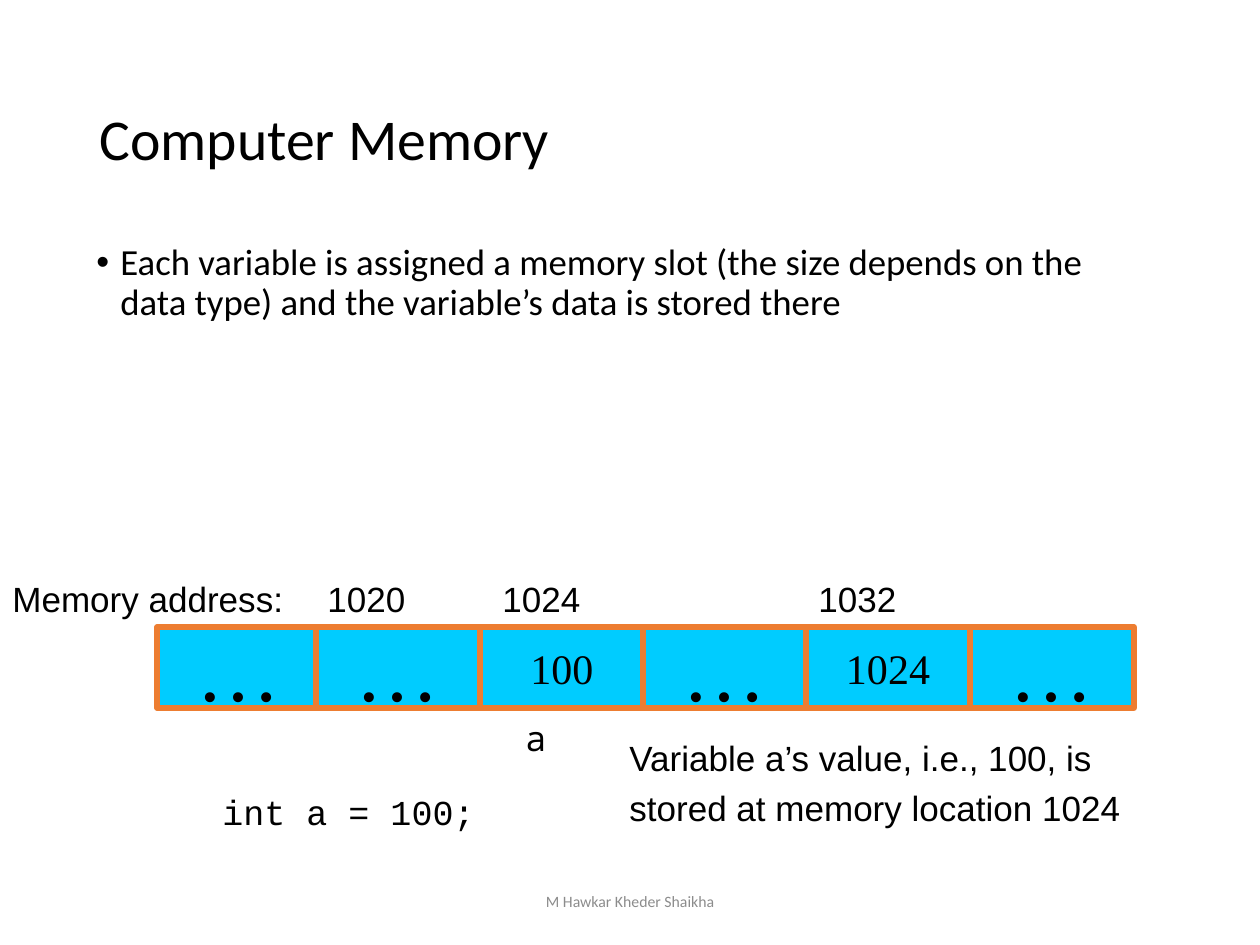
from pptx import Presentation
from pptx.dml.color import RGBColor
from pptx.enum.shapes import MSO_SHAPE
from pptx.enum.text import MSO_ANCHOR, PP_ALIGN
from pptx.oxml import parse_xml
from pptx.oxml.ns import nsdecls
from pptx.util import Emu, Pt

PIXELS_PER_INCH = 126
BLACK = RGBColor(0x00, 0x00, 0x00)
GREY = RGBColor(0x8C, 0x8C, 0x8C)
CYAN = RGBColor(0x00, 0xCC, 0xFF)
ORANGE = RGBColor(0xED, 0x7D, 0x31)

CELL_TOP, CELL_WIDTH, CELL_HEIGHT = 627, 164, 81
FIRST_CELL_LEFT = 157
CELL_LEFTS = [FIRST_CELL_LEFT, 316, 480, 643, 806, 970]
CELL_VALUES = ["…", "…", "100", "…", "1024", "…"]
ADDRESS_TOP = 571


def px(length):
    return Emu(round(length * 914400 / PIXELS_PER_INCH))


def write(shape, text, size=20, font="Arial", color=BLACK, align=PP_ALIGN.LEFT,
          anchor=MSO_ANCHOR.TOP, wrap=True, line_spacing=None, gap=0, bullet=False):
    """Fill a shape with one paragraph for each line of text."""
    frame = shape.text_frame
    frame.word_wrap = wrap
    frame.vertical_anchor = anchor
    for index, line in enumerate(text.split("\n")):
        para = frame.add_paragraph() if index else frame.paragraphs[0]
        if bullet:
            add_bullet(para)
        para.alignment = align
        if line_spacing:
            para.line_spacing = line_spacing
        if index:
            para.space_before = Pt(gap)
        span = para.add_run()
        span.text = line
        span.font.size = Pt(size)
        span.font.name = font
        span.font.color.rgb = color


def add_bullet(para):
    properties = para._p.get_or_add_pPr()
    properties.set("marL", str(px(24)))
    properties.set("indent", str(px(-24)))
    properties.append(parse_xml(f'<a:buFont {nsdecls("a")} typeface="Arial"/>'))
    properties.append(parse_xml(f'<a:buChar {nsdecls("a")} char="•"/>'))


def add_title(slide, text):
    title = slide.shapes.title
    title.left, title.top, title.width, title.height = map(px, (87, 50, 1086, 183))
    write(title, text, size=33, font="Calibri", anchor=MSO_ANCHOR.MIDDLE, line_spacing=0.9)


def add_text(slide, text, left, top, width, height=54, **text_format):
    box = slide.shapes.add_textbox(px(left), px(top), px(width), px(height))
    write(box, text, **text_format)


def add_cell(slide, left, value):
    """Draw one memory slot holding a value."""
    cell = slide.shapes.add_shape(MSO_SHAPE.RECTANGLE, px(left), px(CELL_TOP),
                                  px(CELL_WIDTH), px(CELL_HEIGHT))
    cell.shadow.inherit = False
    cell.fill.solid()
    cell.fill.fore_color.rgb = CYAN
    cell.line.color.rgb = ORANGE
    cell.line.width = Pt(3)
    write(cell, value, size=48 if value == "…" else 24, font="Times New Roman",
          align=PP_ALIGN.CENTER, anchor=MSO_ANCHOR.MIDDLE, wrap=False)


def main():
    deck = Presentation()
    deck.slide_width, deck.slide_height = px(1260), px(945)
    slide = deck.slides.add_slide(deck.slide_layouts[5])

    add_title(slide, "Computer Memory")
    add_text(slide, "Each variable is assigned a memory slot (the size depends on the "
             "data type) and the variable’s data is stored there",
             84, 238, 1081, 455, size=21, font="Calibri", line_spacing=0.9, bullet=True)

    for left, value in zip(CELL_LEFTS, CELL_VALUES):
        add_cell(slide, left, value)
    for label, left, width in [("Memory address:", 0, 315), ("1020", 315, 134),
                               ("1024", 490, 134), ("1032", 806, 104)]:
        add_text(slide, label, left, ADDRESS_TOP, width)

    add_text(slide, "a", 513, 710, 50, font="Noto Sans Mono")
    add_text(slide, "int a = 100;", 210, 784, 290, font="Courier New")
    add_text(slide, "Variable a’s value, i.e., 100, is\nstored at memory location 1024",
             617, 730, 549, 105, gap=5)
    add_text(slide, "M Hawkar Kheder Shaikha", 417, 876, 426, 50, size=9, font="Calibri",
             color=GREY, align=PP_ALIGN.CENTER, anchor=MSO_ANCHOR.MIDDLE)
    deck.save("out.pptx")


if __name__ == "__main__":
    main()
